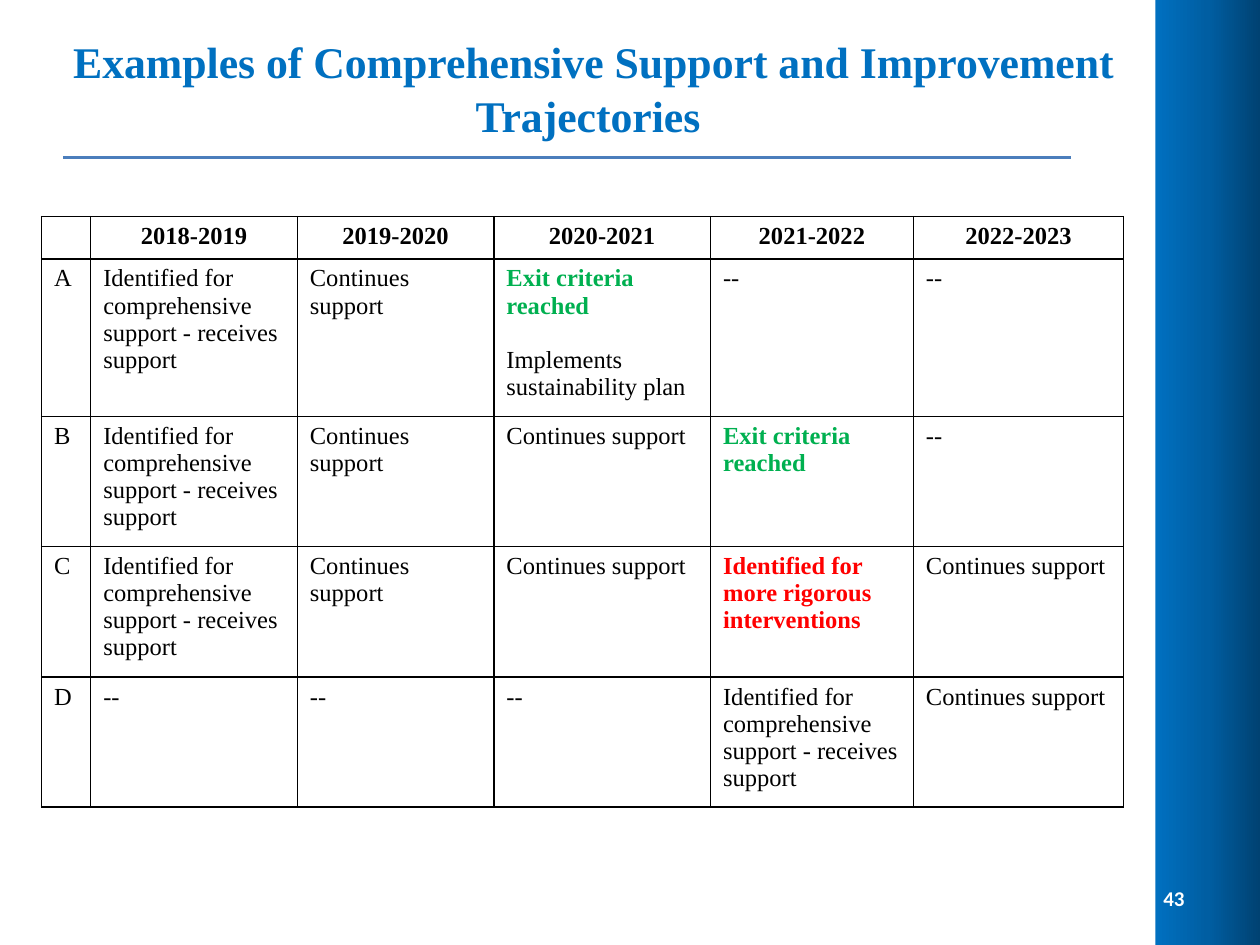
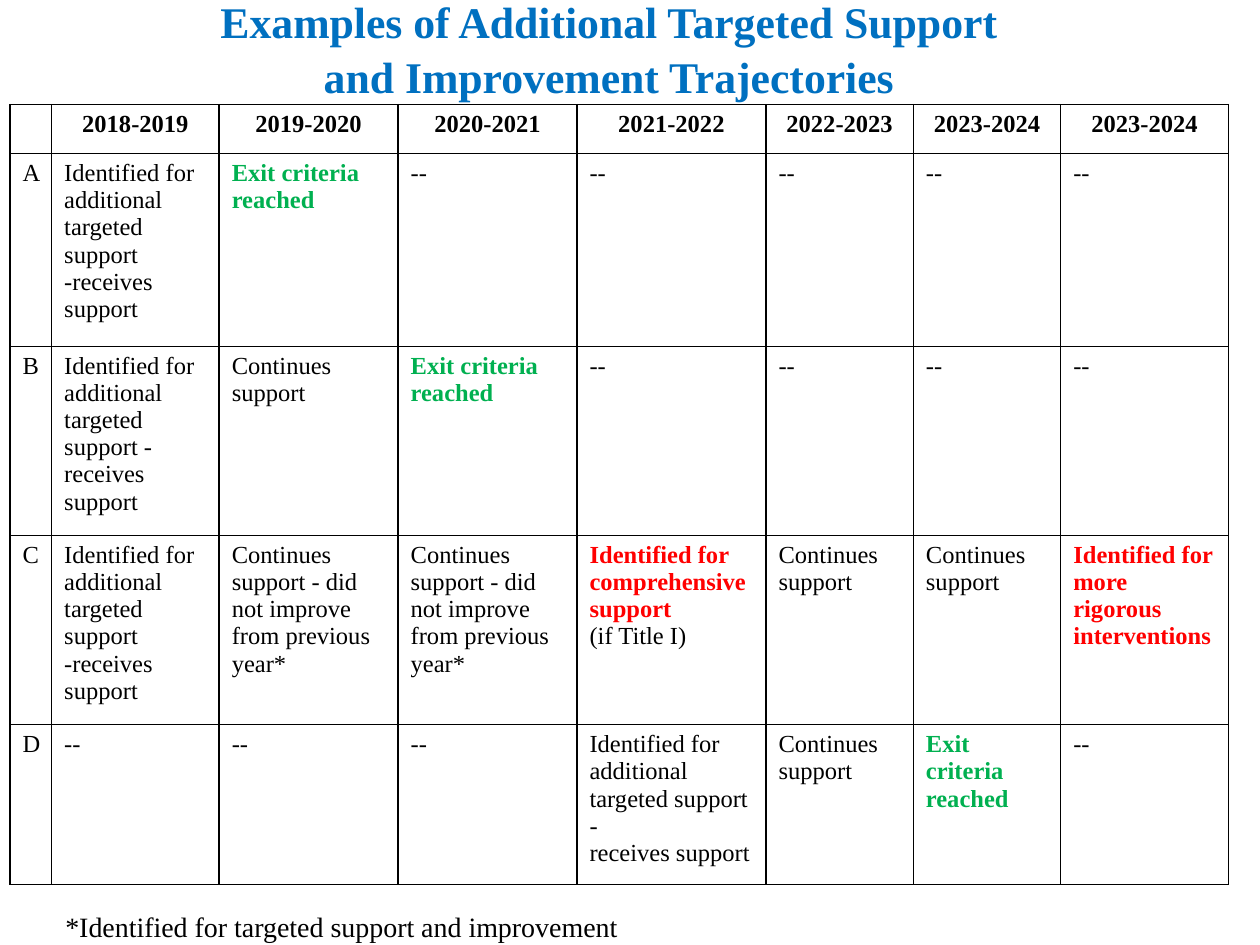
import copy
from typing import Any, NamedTuple

import lxml.etree
import pptx
import pptx.dml.color
import pptx.enum.shapes
import pptx.enum.text
import pptx.oxml.ns
import pptx.util

Inches = pptx.util.Inches
Pt = pptx.util.Pt
Align = pptx.enum.text.PP_ALIGN
Anchor = pptx.enum.text.MSO_ANCHOR
qn = pptx.oxml.ns.qn

SERIF = "Times New Roman"
BLACK, WHITE, BLUE, GREEN, RED = "000000", "FFFFFF", "0070C0", "00B050", "FF0000"
SHADES = [(0, BLUE), (0.5, "005EA2"), (1, "004272")]


class Style(NamedTuple):
    size: float
    color: str = BLACK
    bold: bool = False
    font: str = SERIF
    align: Any = Align.LEFT
    space: float = 1


class Part(NamedTuple):
    text: str
    style: Style
    before: float = 0


class Box(NamedTuple):
    left: float
    top: float
    width: float
    height: float


class Grid(NamedTuple):
    left: float
    top: float
    widths: list[float]
    heights: list[float]
    rows: list[list[Any]]


TITLE = Style(25, BLUE, True, align=Align.CENTER, space=1.04)
HEAD = Style(14, bold=True, align=Align.CENTER)
BODY = Style(14)
GOOD = Style(14, GREEN, True)
BAD = Style(14, RED, True)
NOTE = Style(16)
PAGE = Style(12, WHITE, True, "Calibri", Align.RIGHT)

NONE = "--"
STAY = "Continues support"
FULL = "Identified for comprehensive support - receives support"
MORE = "Identified for additional targeted support - receives support"
TIGHT = MORE.replace("- ", "-")
LAG = "Continues support - did not improve from previous year*"
EXIT = Part("Exit criteria reached", GOOD)
RIGOR = Part("Identified for more rigorous interventions", BAD)


def years(first: int, last: int) -> list[Part]:
    return [Part(f"{year}-{year + 1}", HEAD) for year in range(first, last + 1)]


FIRST = Grid(
    0.33, 1.72,
    [0.39, 1.64, 1.56, 1.72, 1.61, 1.67],
    [0.32, 1.17, 0.96, 0.96, 0.96],
    [
        ["", *years(2018, 2022)],
        ["A", FULL, STAY, [EXIT, Part("Implements sustainability plan", BODY, 15.5)], NONE, NONE],
        ["B", FULL, STAY, STAY, EXIT, NONE],
        ["C", FULL, STAY, STAY, RIGOR, STAY],
        ["D", NONE, NONE, NONE, FULL, STAY],
    ],
)

NEXT = Grid(
    0.08, 0.83,
    [0.33, 1.33, 1.42, 1.42, 1.5, 1.17, 1.17, 1.33],
    [0.39, 1.53, 1.39, 1.5, 1.17],
    [
        ["", *years(2018, 2023), *years(2023, 2023)],
        ["A", TIGHT, EXIT] + [NONE] * 5,
        ["B", MORE, STAY, EXIT] + [NONE] * 4,
        ["C", TIGHT, LAG, LAG,
         [Part("Identified for comprehensive support", BAD), Part("(if Title I)", BODY)],
         STAY, STAY, RIGOR],
        ["D", NONE, NONE, NONE,
         ["Identified for additional targeted support -", "receives support"],
         STAY, EXIT, NONE],
    ],
)


def put(item: Any, values: dict[str, Any]) -> None:
    for name, value in values.items():
        setattr(item, name, value)


def tint(code: str) -> pptx.dml.color.RGBColor:
    return pptx.dml.color.RGBColor.from_string(code)


def place(box: Box) -> list[int]:
    return [Inches(side) for side in box]


def write(frame: Any, parts: list[Part]) -> None:
    for index, part in enumerate(parts):
        para = frame.paragraphs[0] if index == 0 else frame.add_paragraph()
        style = part.style
        para.text = part.text
        put(para, {"alignment": style.align, "line_spacing": style.space})
        if part.before:
            para.space_before = Pt(part.before)
        for run in para.runs:
            put(run.font, {"name": style.font, "size": Pt(style.size), "bold": style.bold})
            run.font.color.rgb = tint(style.color)
        if not part.text:
            lxml.etree.SubElement(para._p, qn("a:endParaRPr"), sz=str(style.size * 100))


def label(slide: Any, box: Box, text: str, style: Style, anchor: Any = Anchor.MIDDLE) -> None:
    frame = slide.shapes.add_textbox(*place(box)).text_frame
    put(frame, {"word_wrap": True, "vertical_anchor": anchor})
    write(frame, [Part(text, style)])


def frame_cell(cell: Any) -> None:
    props = cell._tc.get_or_add_tcPr()
    for side in ("lnL", "lnR", "lnT", "lnB"):
        line = lxml.etree.SubElement(props, qn(f"a:{side}"), w=str(Pt(1)))
        fill = lxml.etree.SubElement(line, qn("a:solidFill"))
        lxml.etree.SubElement(fill, qn("a:srgbClr"), val=BLACK)
    cell.fill.background()


def draw_grid(slide: Any, grid: Grid) -> None:
    box = Box(grid.left, grid.top, sum(grid.widths), sum(grid.heights))
    table = slide.shapes.add_table(len(grid.heights), len(grid.widths), *place(box)).table
    put(table, {"first_row": False, "horz_banding": False})
    for column, width in zip(table.columns, grid.widths):
        column.width = Inches(width)
    for row, height, items in zip(table.rows, grid.heights, grid.rows):
        row.height = Inches(height)
        for cell, item in zip(row.cells, items):
            parts = item if type(item) is list else [item]
            write(cell.text_frame, [Part(p, BODY) if isinstance(p, str) else p for p in parts])
            frame_cell(cell)


def draw_band(slide: Any, box: Box) -> None:
    kind = pptx.enum.shapes.MSO_SHAPE.RECTANGLE
    band = slide.shapes.add_shape(kind, *place(box))
    band.shadow.inherit = False
    band.line.fill.background()
    band.fill.gradient()
    band.fill.gradient_angle = 0
    stops = band._element.spPr.find(".//" + qn("a:gsLst"))
    stops.append(copy.deepcopy(stops[0]))
    for stop, (spot, code) in zip(band.fill.gradient_stops, SHADES):
        stop.color.rgb = tint(code)
        stop.position = spot


def draw_rule(slide: Any, left: float, right: float, top: float) -> None:
    kind = pptx.enum.shapes.MSO_CONNECTOR.STRAIGHT
    ends = [Inches(side) for side in (left, top, right, top)]
    rule = slide.shapes.add_connector(kind, *ends)
    rule.line.color.rgb = tint("4B7EBC")
    rule.line.width = Pt(2)
    lxml.etree.SubElement(rule._element.spPr, qn("a:effectLst"))


def main() -> None:
    deck = pptx.Presentation()
    put(deck, {"slide_width": Inches(10), "slide_height": Inches(7.5)})
    blank = deck.slide_layouts[6]

    slide = deck.slides.add_slide(blank)
    draw_band(slide, Box(9.17, 0, 0.83, 7.5))
    title = "Examples of Comprehensive Support and Improvement Trajectories "
    label(slide, Box(0.42, 0.3, 8.58, 0.78), title, TITLE)
    draw_grid(slide, FIRST)
    draw_rule(slide, 0.5, 8.5, 1.25)
    label(slide, Box(9.08, 6.93, 0.42, 0.4), "43", PAGE)

    slide = deck.slides.add_slide(blank)
    title = "Examples of Additional Targeted Support \vand Improvement Trajectories "
    label(slide, Box(0.25, -0.25, 9.25, 1.25), title, TITLE)
    draw_grid(slide, NEXT)
    note = "*Identified for targeted support and improvement"
    label(slide, Box(0.42, 7.17, 9.33, 0.37), note, NOTE, Anchor.TOP)

    deck.save("out.pptx")


if __name__ == "__main__":
    main()
